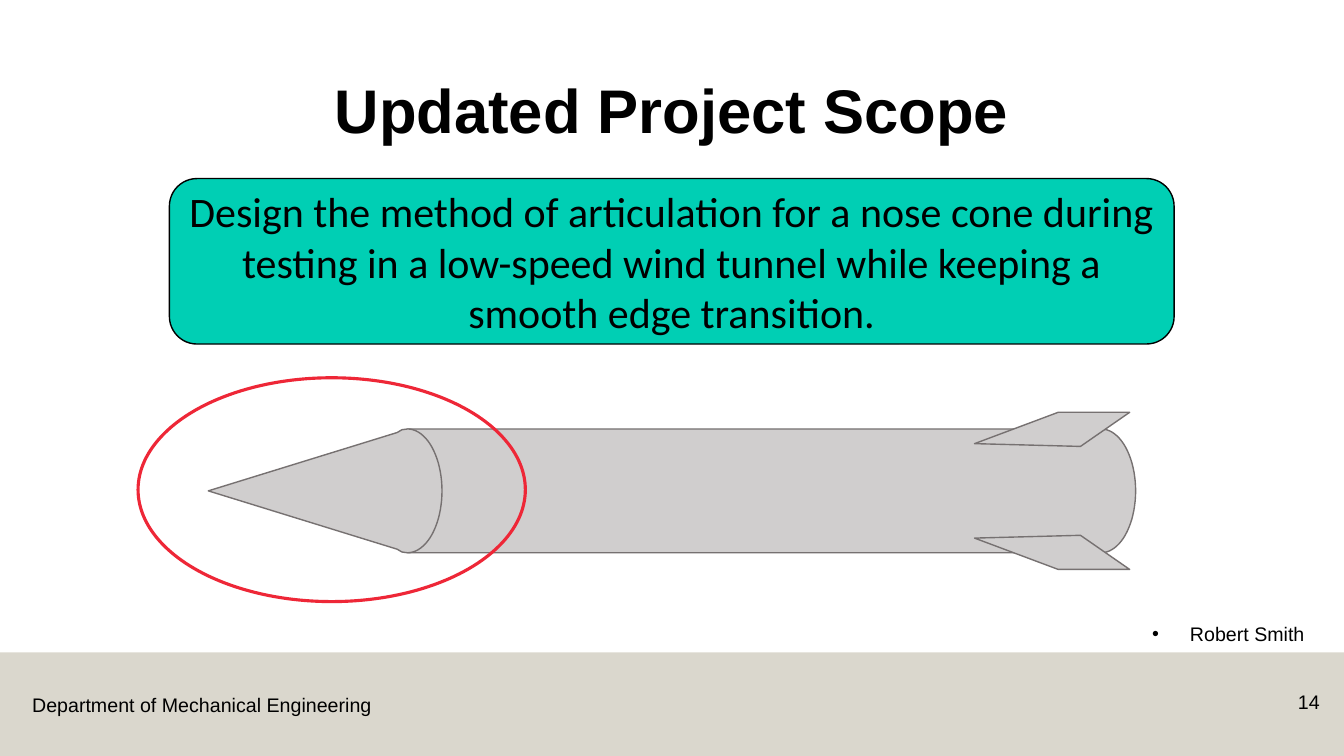
from math import cos, pi, sin

from lxml import etree
from pptx import Presentation
from pptx.dml.color import RGBColor
from pptx.enum.shapes import MSO_SHAPE
from pptx.enum.text import MSO_ANCHOR, MSO_AUTO_SIZE, PP_ALIGN
from pptx.oxml.ns import qn
from pptx.util import Cm, Pt

RECT, ROUND, OVAL = MSO_SHAPE.RECTANGLE, MSO_SHAPE.ROUNDED_RECTANGLE, MSO_SHAPE.OVAL
LEFT, CENTER, RIGHT = PP_ALIGN.LEFT, PP_ALIGN.CENTER, PP_ALIGN.RIGHT
TOP, MIDDLE = MSO_ANCHOR.TOP, MSO_ANCHOR.MIDDLE
FIXED = MSO_AUTO_SIZE.NONE

COLORS = {"ink": "000000", "band": "B7B09C", "teal": "00CFB4",
          "metal": "D0CECE", "edge": "767171", "ring": "EE2737"}


def color(name):
    return RGBColor.from_string(COLORS[name])


def paint(shape, fill=None, line=None, width=1):
    shape.shadow.inherit = False
    if fill:
        shape.fill.solid()
        shape.fill.fore_color.rgb = color(fill)
    else:
        shape.fill.background()
    if line:
        shape.line.color.rgb = color(line)
        shape.line.width = Pt(width)
    else:
        shape.line.fill.background()


def write(shape, text, size, align=LEFT, font="Arial", bold=False,
          anchor=TOP, wrap=True, space=1.0):
    frame = shape.text_frame
    frame.text = text
    frame.word_wrap = wrap
    frame.auto_size = FIXED
    frame.vertical_anchor = anchor
    para = frame.paragraphs[0]
    para.alignment = align
    para.line_spacing = space
    para.space_before = Pt(0)
    style = para.runs[0].font
    style.name, style.size, style.bold = font, Pt(size), bold
    style.color.rgb = color("ink")


def place(shape, x, y, w, h):
    shape.left, shape.top, shape.width, shape.height = Cm(x), Cm(y), Cm(w), Cm(h)


def add_box(slide, kind, x, y, w, h):
    return slide.shapes.add_shape(kind, Cm(x), Cm(y), Cm(w), Cm(h))


def add_text(slide, x, y, w, h, text, **style):
    box = slide.shapes.add_textbox(Cm(x), Cm(y), Cm(w), Cm(h))
    write(box, text, 14, **style)


def add_footer(slide, x, y, w, h):
    # Half-transparent band
    band = add_box(slide, RECT, x, y, w, h)
    paint(band, "band")
    tint = band.fill._xPr.find(qn("a:solidFill"))[0]
    etree.SubElement(tint, qn("a:alpha"), val="50000")
    # Department and page number
    add_text(slide, x + 0.56, y + 0.89, 9.12, 0.86,
             "Department of Mechanical Engineering", wrap=False)
    add_text(slide, x + w - 2.32, y + 0.81, 1.96, 1.02, "14", align=RIGHT)


def add_title(slide, x, y, w, h):
    title = slide.shapes.title
    place(title, x, y, w, h)
    write(title, "Updated Project Scope", 44, CENTER, bold=True,
          anchor=MIDDLE, space=0.9)


def add_author(slide, x, y, w, h):
    name = slide.placeholders[1]
    place(name, x, y, w, h)
    name.text_frame.text = "Robert Smith"
    props = name.text_frame.paragraphs[0]._p.get_or_add_pPr()
    props.set("marL", "0")
    props.set("indent", "0")
    etree.SubElement(props, qn("a:buNone"))
    write(name, "Robert Smith", 14, space=0.9)


def add_scope(slide, x, y, w, h):
    card = add_box(slide, ROUND, x, y, w, h)
    paint(card, "teal", "ink")
    write(card, "Design the method of articulation for a nose cone during "
          "testing in a low-speed wind tunnel while keeping a smooth edge "
          "transition.", 30, CENTER, "Calibri", anchor=MIDDLE)


def add_rocket(slide, x, y, w, h):
    group = slide.shapes.add_group_shape()
    mid = y + h / 2
    end, rear = 5.02, w - 0.87  # ends of the body tube
    rx, ry = 0.87, 1.56         # radii of the rounded ends

    def draw(points):
        spots = [(Cm(x + dx), Cm(mid + dy)) for dx, dy in points]
        form = group.shapes.build_freeform(*spots[0], scale=1.0)
        form.add_line_segments(spots[1:], close=True)
        paint(form.convert_to_shape(), "metal", "edge")

    def bulge(dx):
        turns = [pi * i / 40 - pi / 2 for i in range(41)]
        return [(dx + rx * cos(t), ry * sin(t)) for t in turns]

    # Body tube and nose cone
    draw(bulge(rear) + [(end, ry), (end, -ry)])
    draw(bulge(end) + [(4.88, 1.54), (4.76, 1.47), (0, 0),
                       (4.76, -1.47), (4.88, -1.54)])
    # Mirrored fins
    fin = [(19.31, 1.19), (21.42, 1.98), (23.22, 1.98), (21.98, 1.12)]
    for side in (-1, 1):
        draw([(dx, side * dy) for dx, dy in fin])


def add_ring(slide, x, y, w, h):
    paint(add_box(slide, OVAL, x, y, w, h), line="ring", width=2.25)


def main():
    deck = Presentation()
    deck.slide_width, deck.slide_height = Cm(33.87), Cm(19.05)
    slide = deck.slides.add_slide(deck.slide_layouts[1])
    add_footer(slide, 0, 16.44, 33.87, 2.61)
    add_title(slide, 2.33, 1.02, 29.21, 3.68)
    add_author(slide, 28.78, 15.6, 5.08, 0.86)
    add_scope(slide, 4.27, 4.5, 25.32, 4.17)
    add_rocket(slide, 5.25, 10.39, 23.37, 3.96)
    add_ring(slide, 3.48, 9.52, 9.76, 5.64)
    deck.save("out.pptx")


if __name__ == "__main__":
    main()
